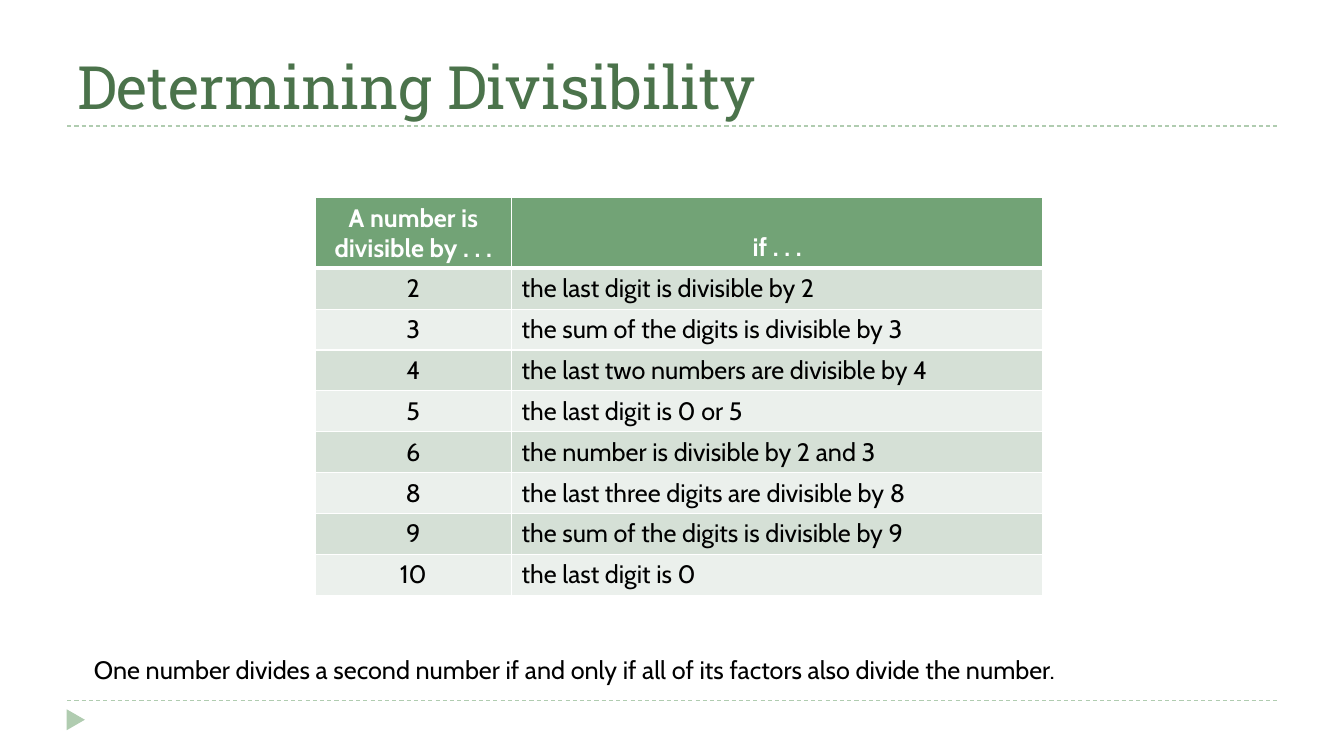
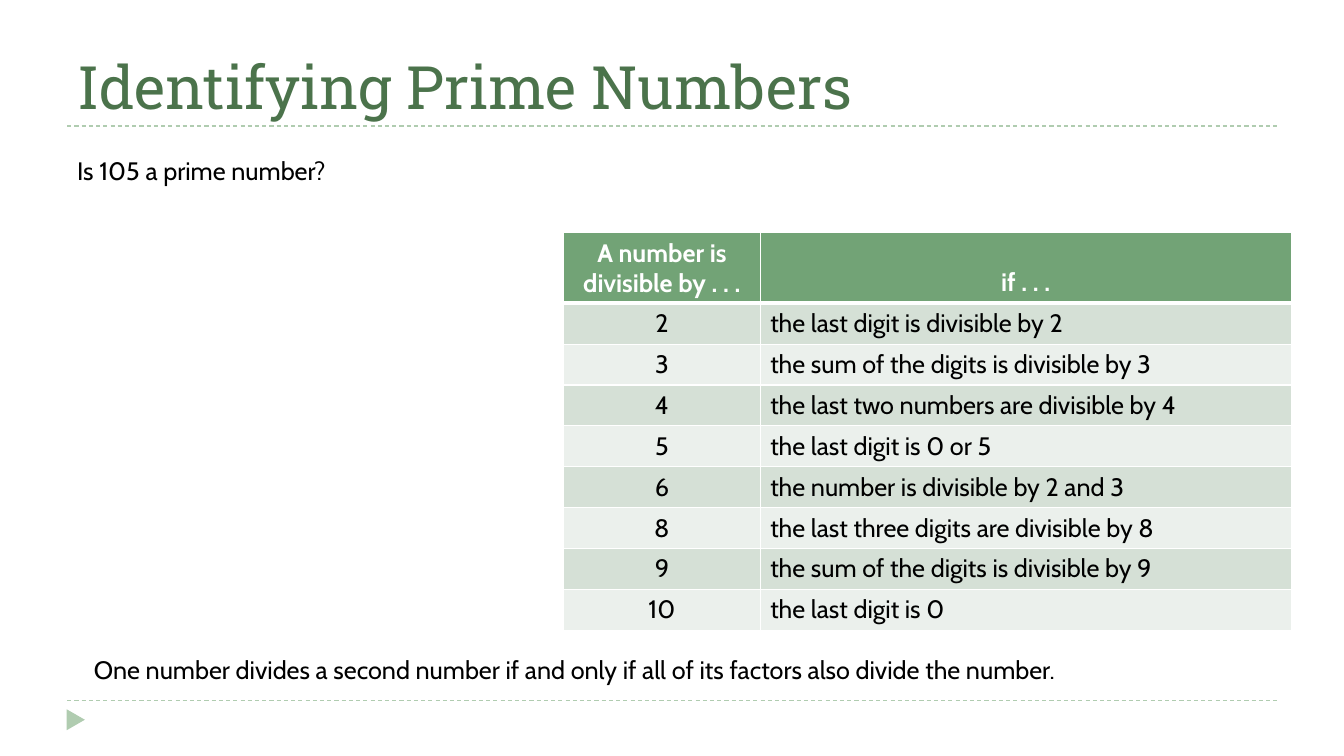
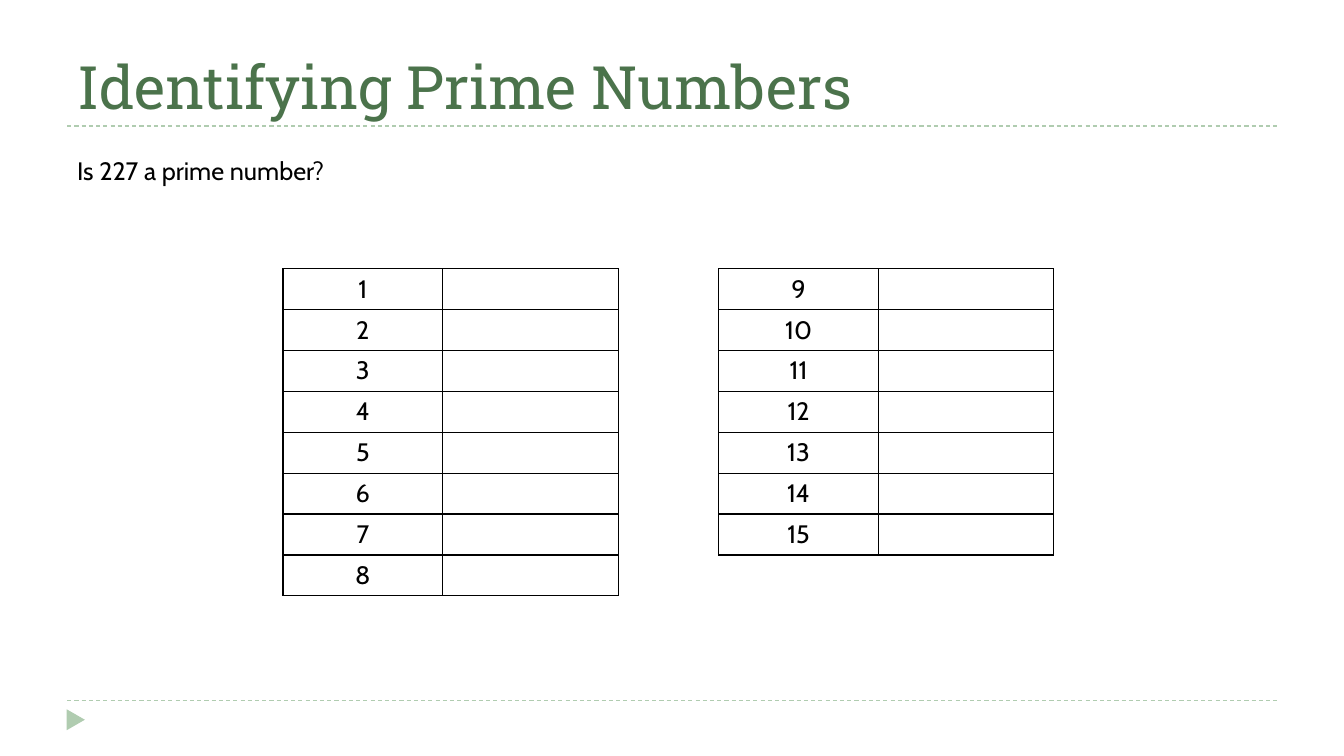
from lxml import etree
from pptx import Presentation
from pptx.dml.color import RGBColor
from pptx.enum.dml import MSO_LINE
from pptx.enum.shapes import MSO_CONNECTOR, MSO_SHAPE
from pptx.enum.text import MSO_ANCHOR, PP_ALIGN
from pptx.oxml.ns import qn
from pptx.util import Pt

STRAIGHT, TRIANGLE, DASH = MSO_CONNECTOR.STRAIGHT, MSO_SHAPE.ISOSCELES_TRIANGLE, MSO_LINE.DASH
LEFT, CENTER = PP_ALIGN.LEFT, PP_ALIGN.CENTER
TOP, BOTTOM = MSO_ANCHOR.TOP, MSO_ANCHOR.BOTTOM

TITLE_FONT, BODY_FONT = "Roboto Slab", "Cabin"
TITLE_SIZE, BODY_SIZE = 42.7, 18
BLACK, WHITE = "000000", "FFFFFF"
TITLE_GREEN, RULE_GREEN, HEADER_GREEN = "4B734B", "B0CCB0", "72A376"
BANDS = ("D5E0D6", "EBF0EC")

SLIDE_WIDTH, SLIDE_HEIGHT, MARGIN = 960, 540, 48
CONTENT_WIDTH = SLIDE_WIDTH - 2 * MARGIN
TITLE_RULE, FOOTER_RULE = 90, 500.4
ROW_HEIGHT, HEADER_HEIGHT = 29.2, 50.4
RULES_COLUMNS = (140.4, 379.4)
WORK_COLUMNS = (114, 125.4)

DIVISIBILITY_RULES = (
    ("2", "the last digit is divisible by 2"),
    ("3", "the sum of the digits is divisible by 3"),
    ("4", "the last two numbers are divisible by 4"),
    ("5", "the last digit is 0 or 5"),
    ("6", "the number is divisible by 2 and 3"),
    ("8", "the last three digits are divisible by 8"),
    ("9", "the sum of the digits is divisible by 9"),
    ("10", "the last digit is 0"),
)
FACTOR_NOTE = ("One number divides a second number if and only if "
               "all of its factors also divide the number.")


def color(hex_code):
    return RGBColor.from_string(hex_code)


def write(paragraph, text, font=BODY_FONT, size=BODY_SIZE, hex_code=BLACK,
          bold=False, align=LEFT):
    paragraph.alignment = align
    run = paragraph.add_run()
    run.text = text
    run.font.name = font
    run.font.size = Pt(size)
    run.font.bold = bold
    run.font.color.rgb = color(hex_code)


def add_text(slide, left, top, height, text, anchor=TOP, **style):
    box = slide.shapes.add_textbox(Pt(left), Pt(top), Pt(CONTENT_WIDTH), Pt(height))
    frame = box.text_frame
    frame.word_wrap = True
    frame.vertical_anchor = anchor
    write(frame.paragraphs[0], text, **style)


def add_rule(slide, top):
    rule = slide.shapes.add_connector(
        STRAIGHT, Pt(MARGIN), Pt(top), Pt(MARGIN + CONTENT_WIDTH), Pt(top))
    rule.line.color.rgb = color(RULE_GREEN)
    rule.line.width = Pt(0.75)
    rule.line.dash_style = DASH
    etree.SubElement(rule._element.spPr, qn("a:effectLst"))


def add_footer_marker(slide):
    marker = slide.shapes.add_shape(
        TRIANGLE, Pt(46.6), Pt(FOOTER_RULE + 7.2), Pt(15), Pt(13))
    marker.rotation = 90
    marker.shadow.inherit = False
    marker.fill.solid()
    marker.fill.fore_color.rgb = color(RULE_GREEN)
    marker.line.fill.background()


def add_slide(presentation, title):
    """Add a blank slide with the shared title, rules and footer marker."""
    slide = presentation.slides.add_slide(presentation.slide_layouts[6])
    add_rule(slide, FOOTER_RULE)
    add_rule(slide, TITLE_RULE)
    add_footer_marker(slide)
    add_text(slide, MARGIN, 12, TITLE_RULE - 12, title, anchor=BOTTOM,
             font=TITLE_FONT, size=TITLE_SIZE, hex_code=TITLE_GREEN)
    return slide


def format_cell(cell, fill, border, top=1, bottom=1):
    properties = cell._tc.get_or_add_tcPr()
    for side, width in (("L", 1), ("R", 1), ("T", top), ("B", bottom)):
        line = etree.SubElement(properties, qn(f"a:ln{side}"), w=str(Pt(width)))
        solid = etree.SubElement(line, qn("a:solidFill"))
        etree.SubElement(solid, qn("a:srgbClr"), val=border)
    cell.fill.solid()
    cell.fill.fore_color.rgb = color(fill)


def add_table(slide, left, top, columns, heights):
    frame = slide.shapes.add_table(len(heights), len(columns), Pt(left), Pt(top),
                                   Pt(sum(columns)), Pt(sum(heights)))
    table = frame.table
    table.horz_banding = False
    for column, width in zip(table.columns, columns):
        column.width = Pt(width)
    for row, height in zip(table.rows, heights):
        row.height = Pt(height)
    return table


def add_rules_table(slide, left, top):
    heights = [HEADER_HEIGHT] + [ROW_HEIGHT] * len(DIVISIBILITY_RULES)
    table = add_table(slide, left, top, RULES_COLUMNS, heights)
    for cell, text in zip(table.rows[0].cells, ("A number is divisible by . . .", "if . . .")):
        format_cell(cell, HEADER_GREEN, WHITE, bottom=3)
        cell.vertical_anchor = BOTTOM
        write(cell.text_frame.paragraphs[0], text, hex_code=WHITE, bold=True, align=CENTER)
    for index, texts in enumerate(DIVISIBILITY_RULES):
        cells = table.rows[index + 1].cells
        for cell, text, align in zip(cells, texts, (CENTER, LEFT)):
            format_cell(cell, BANDS[index % 2], WHITE, top=1 if index else 3)
            write(cell.text_frame.paragraphs[0], text, align=align)


def add_work_table(slide, left, top, numbers):
    """Add a ruled table of candidate divisors with room for answers."""
    table = add_table(slide, left, top, WORK_COLUMNS, [ROW_HEIGHT] * len(numbers))
    table.first_row = False
    for row, number in zip(table.rows, numbers):
        for cell in row.cells:
            format_cell(cell, WHITE, BLACK)
        write(row.cells[0].text_frame.paragraphs[0], str(number), align=CENTER)


def add_question(slide, number):
    add_text(slide, MARGIN, 107.4, 29, f"Is {number} a prime number?")


def add_factor_note(slide):
    add_text(slide, MARGIN + 12, 463.8, 29, FACTOR_NOTE)


def build_divisibility_slide(presentation):
    slide = add_slide(presentation, "Determining Divisibility")
    add_rules_table(slide, 225, 141.2)
    add_factor_note(slide)


def build_rules_question_slide(presentation):
    slide = add_slide(presentation, "Identifying Prime Numbers")
    add_question(slide, 105)
    add_rules_table(slide, 402.6, 166.2)
    add_factor_note(slide)


def build_work_question_slide(presentation):
    slide = add_slide(presentation, "Identifying Prime Numbers")
    add_question(slide, 227)
    add_work_table(slide, 202.2, 192, range(1, 9))
    add_work_table(slide, 513.4, 192, range(9, 16))


def main():
    presentation = Presentation()
    presentation.slide_width = Pt(SLIDE_WIDTH)
    presentation.slide_height = Pt(SLIDE_HEIGHT)
    build_divisibility_slide(presentation)
    build_rules_question_slide(presentation)
    build_work_question_slide(presentation)
    presentation.save("out.pptx")


if __name__ == "__main__":
    main()
